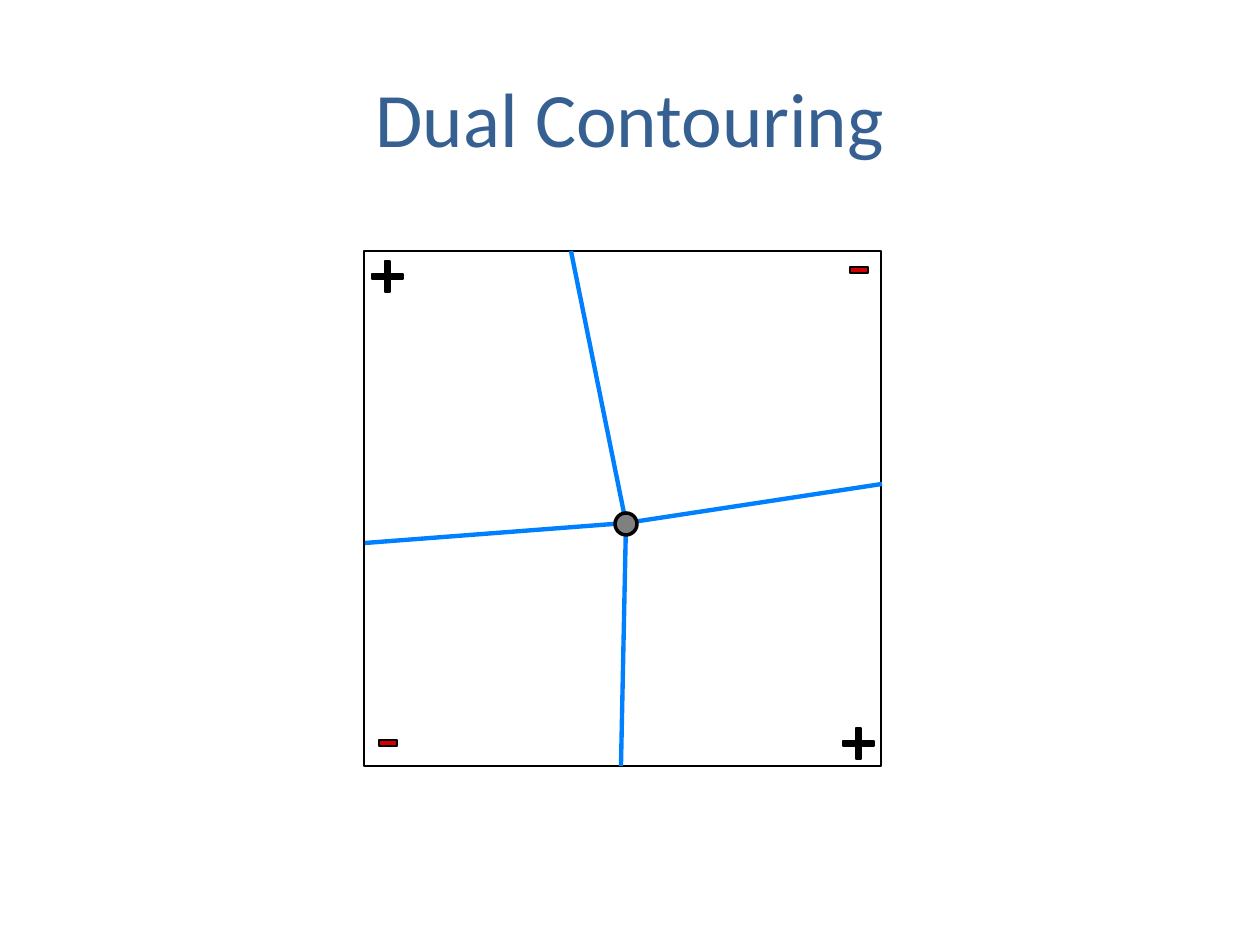
import pptx
import pptx.dml.color
import pptx.enum.shapes
import pptx.enum.text
import pptx.oxml.ns
import pptx.util
from lxml import etree

RGBColor = pptx.dml.color.RGBColor
Shapes = pptx.enum.shapes.MSO_SHAPE

PX = pptx.util.Inches(1) / 126
FONT = "Calibri"
TITLE_BLUE = RGBColor(0x37, 0x60, 0x92)
EDGE_BLUE = RGBColor(0x00, 0x80, 0xFF)
RED = RGBColor(0xD4, 0x00, 0x00)
GRAY = RGBColor(0x80, 0x80, 0x80)
BLACK = RGBColor(0x00, 0x00, 0x00)


def emu(*lengths):
    return [round(length * PX) for length in lengths]


def apply_format(target, values):
    for name, value in values.items():
        setattr(target, name, value)


class SlideBuilder:
    def __init__(self, slide):
        self.slide = slide
        self.shapes = slide.shapes

    def style(self, shape, fill, line_width):
        shape.shadow.inherit = False
        if fill is None:
            shape.fill.background()
        else:
            shape.fill.solid()
            shape.fill.fore_color.rgb = fill
        shape.line.color.rgb = BLACK
        shape.line.width = pptx.util.Pt(line_width)

    def title(self, text, left, top, width, height):
        frame = self.shapes.add_textbox(*emu(left, top, width, height)).text_frame
        apply_format(frame, {
            "word_wrap": True,
            "vertical_anchor": pptx.enum.text.MSO_ANCHOR.MIDDLE,
        })
        paragraph = frame.paragraphs[0]
        apply_format(paragraph, {
            "text": text,
            "alignment": pptx.enum.text.PP_ALIGN.CENTER,
        })
        apply_format(paragraph.font, {"name": FONT, "size": pptx.util.Pt(44)})
        paragraph.font.color.rgb = TITLE_BLUE

    def shape(self, kind, left, top, width, height, fill=None, line_width=0):
        shape = self.shapes.add_shape(kind, *emu(left, top, width, height))
        self.style(shape, fill, line_width)

    def plus(self, left, top, arm=13, thickness=5):
        near, far, end = arm, arm + thickness, 2 * arm + thickness
        outline = [(near, end), (near, far), (0, far), (0, near), (near, near), (near, 0),
                   (far, 0), (far, near), (end, near), (end, far), (far, far), (far, end)]
        builder = self.shapes.build_freeform(*outline[0], scale=PX)
        builder.add_line_segments(outline[1:], close=True)
        self.style(builder.convert_to_shape(*emu(left, top)), BLACK, 0)

    def minus(self, left, top):
        self.shape(Shapes.RECTANGLE, left, top, 18, 6, RED)

    def line(self, start, end):
        connector = self.shapes.add_connector(
            pptx.enum.shapes.MSO_CONNECTOR.STRAIGHT, *emu(*start, *end))
        connector.line.color.rgb = EDGE_BLUE
        connector.line.width = pptx.util.Pt(2.5)
        etree.SubElement(connector._element.spPr, pptx.oxml.ns.qn("a:effectLst"))


def main():
    presentation = pptx.Presentation()
    presentation.slide_width, presentation.slide_height = emu(1260, 945)
    builder = SlideBuilder(presentation.slides.add_slide(presentation.slide_layouts[6]))

    builder.title("Dual Contouring", 63, 38, 1134, 158)

    # Grid cell with the sign at each corner
    builder.shape(Shapes.RECTANGLE, 364, 251, 517, 515)
    for corner in [(843, 728), (372, 261)]:
        builder.plus(*corner)
    for corner in [(850, 267), (379, 740)]:
        builder.minus(*corner)

    # Dual edges from the cell vertex to each side
    vertex = (626, 523)
    for crossing in [(571, 251), (882, 484), (621, 766), (365, 543)]:
        builder.line(vertex, crossing)

    # Cell vertex
    builder.shape(Shapes.OVAL, 615, 513, 22, 22, GRAY, line_width=2)

    presentation.save("out.pptx")


if __name__ == "__main__":
    main()
